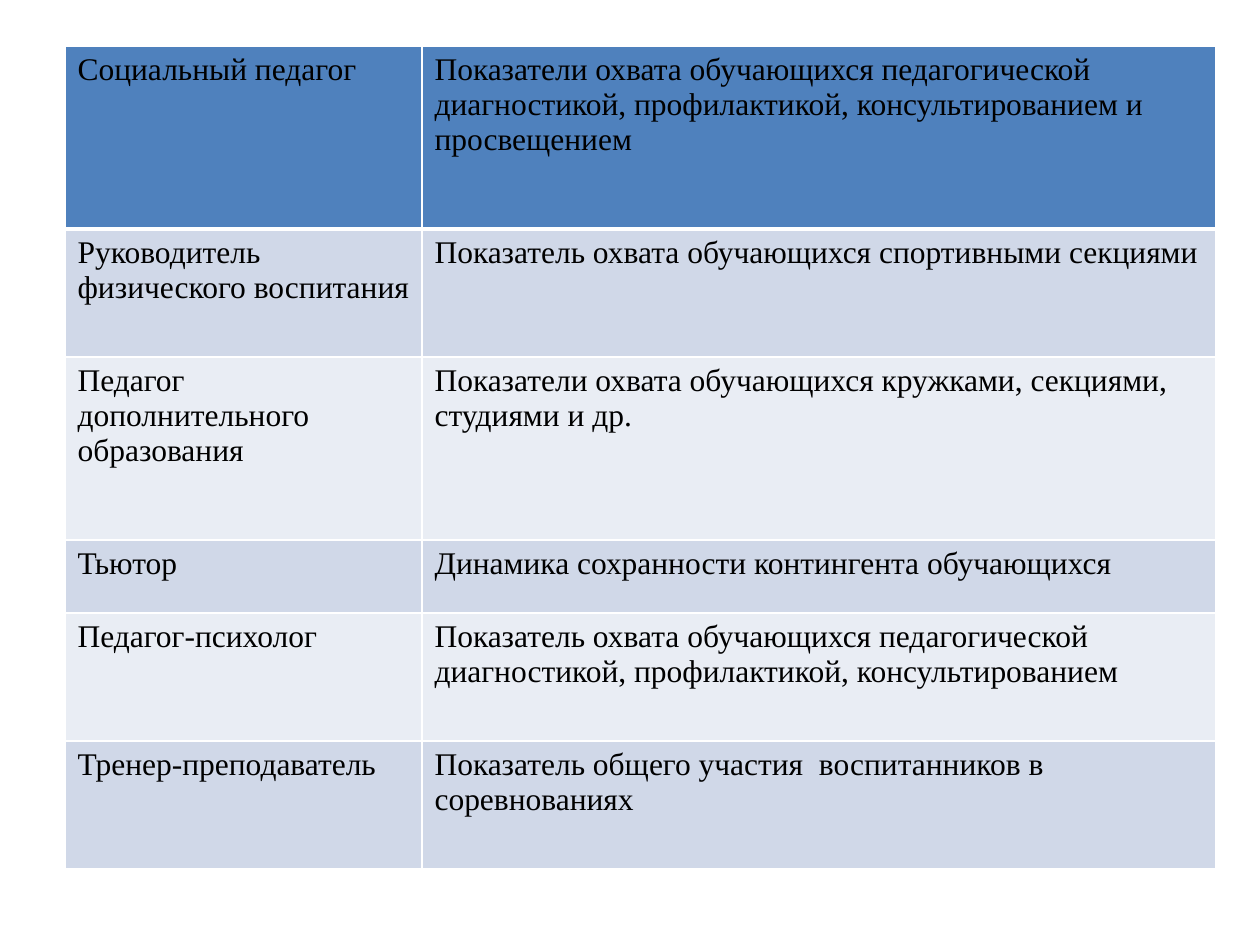
from lxml.etree import SubElement
from pptx import Presentation
from pptx.dml.color import RGBColor as RGB
from pptx.enum.text import PP_ALIGN as ALIGN
from pptx.oxml.ns import qn
from pptx.util import Pt

EMU_PER_PX = 914400 / 126
THEME = {
    "font": "Times New Roman", "size": 18, "text": "000000",
    "header": "4F81BD", "bands": ("D0D8E8", "E9EDF4"),
    "border": "FFFFFF", "thin": 1, "thick": 3,
}


def px(length):
    return round(length * EMU_PER_PX)


def write(frame, text, size=THEME["size"], color=THEME["text"], align=ALIGN.LEFT):
    frame.text = text
    for paragraph in frame.paragraphs:
        paragraph.alignment = align
        font = paragraph.runs[0].font
        font.name, font.size = THEME["font"], Pt(size)
        font.color.rgb = RGB.from_string(color)


# Slide
deck = Presentation()
deck.slide_width, deck.slide_height = px(1260), px(945)
slide = deck.slides.add_slide(deck.slide_layouts[6])

# Staff roles, their indicators and row heights
indicators = [
    ("Социальный педагог",
     "Показатели охвата обучающихся педагогической диагностикой, "
     "профилактикой, консультированием и просвещением", 183),
    ("Руководитель физического воспитания",
     "Показатель охвата обучающихся спортивными секциями", 128),
    ("Педагог дополнительного образования",
     "Показатели охвата обучающихся кружками, секциями, студиями и др.", 183),
    ("Тьютор", "Динамика сохранности контингента обучающихся", 73),
    ("Педагог-психолог",
     "Показатель охвата обучающихся педагогической диагностикой, "
     "профилактикой, консультированием", 128),
    ("Тренер-преподаватель",
     "Показатель общего участия  воспитанников в\nсоревнованиях", 128),
]
column_widths = (357, 794)
table_height = sum(height for _, _, height in indicators)

# Table grid
table = slide.shapes.add_table(
    len(indicators), len(column_widths),
    px(65), px(46), px(sum(column_widths)), px(table_height)).table
for column, width in zip(table.columns, column_widths):
    column.width = px(width)

# Cells: text, borders, then fill
for row, (role, indicator, height) in enumerate(indicators):
    table.rows[row].height = px(height)
    for col, text in enumerate((role, indicator)):
        cell = table.cell(row, col)
        justified = "\n" in text
        write(cell.text_frame, text, align=ALIGN.JUSTIFY if justified else ALIGN.LEFT)

        cell_props = cell._tc.get_or_add_tcPr()
        for side in ("lnL", "lnR", "lnT", "lnB"):
            under_header = (row, side) in ((0, "lnB"), (1, "lnT"))
            weight = THEME["thick"] if under_header else THEME["thin"]
            line = SubElement(cell_props, qn(f"a:{side}"), w=str(Pt(weight)))
            line_fill = SubElement(line, qn("a:solidFill"))
            SubElement(line_fill, qn("a:srgbClr"), val=THEME["border"])

        cell.fill.solid()
        fill_color = THEME["bands"][(row - 1) % 2] if row else THEME["header"]
        cell.fill.fore_color.rgb = RGB.from_string(fill_color)

deck.save("out.pptx")
